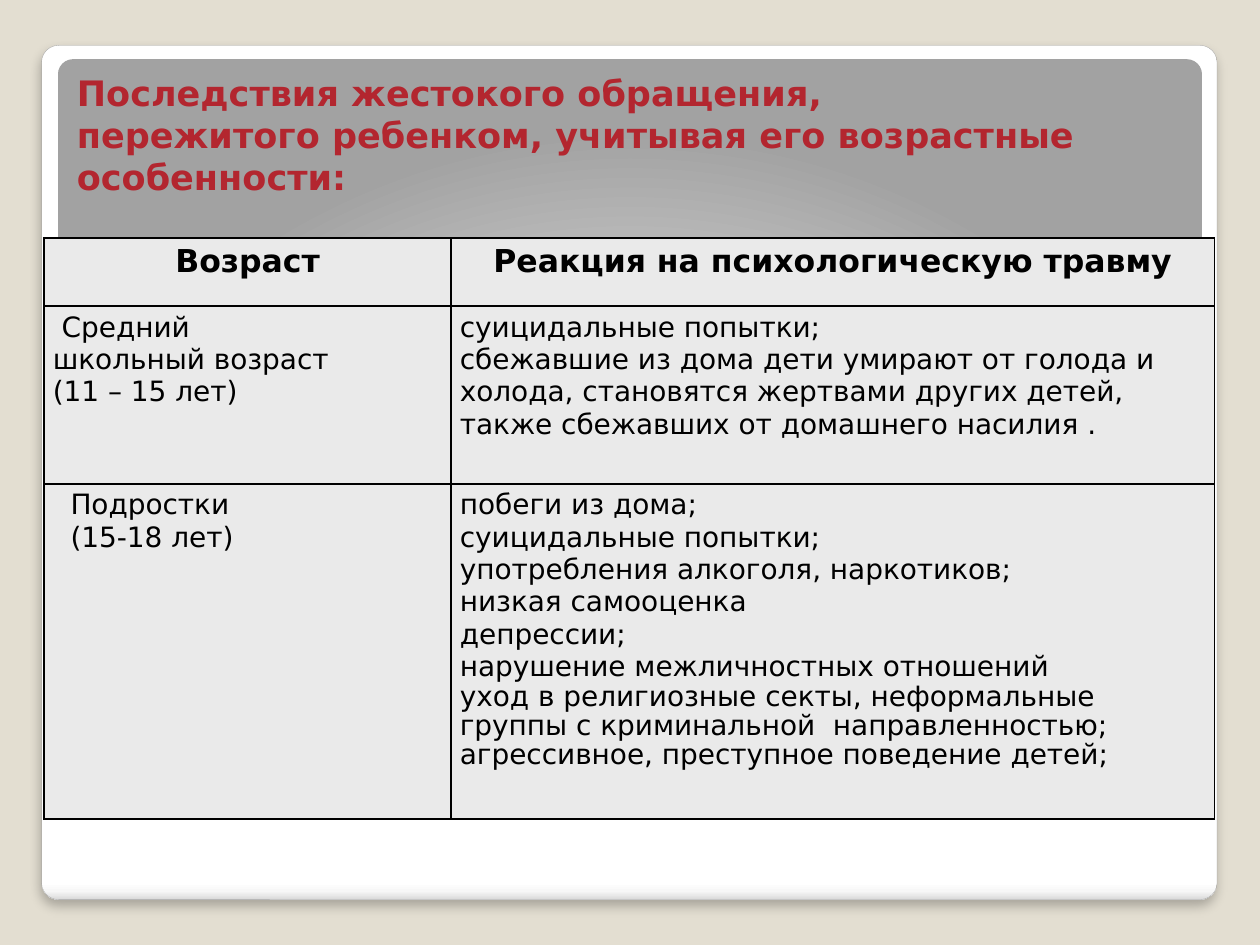
from lxml import etree
from pptx import Presentation
from pptx.dml.color import RGBColor
from pptx.enum import shapes, text
from pptx.oxml import ns
from pptx.util import Inches, Pt

FONT = "DejaVu Sans"
HEADINGS = ["Возраст", "Реакция на психологическую травму"]
MIDDLE_SCHOOL = ["Средний школьный\u00a0возраст", "(11 – 15 лет)"]
MIDDLE_SCHOOL_REACTIONS = [
    "суицидальные попытки;",
    "сбежавшие из дома дети умирают от голода и холода, становятся жертвами "
    "других детей, также сбежавших от домашнего насилия .",
]
TEENAGERS = ["Подростки", "(15-18 лет)"]
TEENAGER_REACTIONS = [
    "побеги из дома;",
    "суицидальные попытки;",
    "употребления алкоголя, наркотиков;",
    "низкая самооценка",
    "депрессии;",
    "нарушение межличностных отношений",
]
TEENAGER_RISKS = [
    "уход в религиозные секты, неформальные группы с криминальной  направленностью;",
    "агрессивное, преступное поведение детей;",
]


def color(value):
    return RGBColor.from_string(value)


def add_element(parent, tag, **attributes):
    values = {name: str(value) for name, value in attributes.items()}
    return etree.SubElement(parent, ns.qn(tag), values)


def add_color(parent, value):
    return add_element(parent, "a:srgbClr", val=value)


def write(frame, lines, size=16, bold=False, fill="000000", spacing=None,
          align=text.PP_ALIGN.LEFT, margin=0, first_indent=0):
    """Append lines as paragraphs, filling the frame's empty first one."""
    for line in lines:
        paragraph = frame.paragraphs[-1]
        if paragraph.runs:
            paragraph = frame.add_paragraph()
        paragraph.alignment = align
        paragraph.space_before = Pt(0)
        if spacing:
            paragraph.line_spacing = spacing
        properties = paragraph._p.get_or_add_pPr()
        properties.set("marL", str(Inches(margin)))
        properties.set("indent", str(Inches(first_indent)))
        run = paragraph.add_run()
        run.text = line
        run.font.name = FONT
        run.font.size = Pt(size)
        run.font.bold = bold
        run.font.color.rgb = color(fill)


def add_panel(slide, left, top, width, height, stops, circular=False):
    """Add a rounded panel with a vertical or circular gradient."""
    panel = slide.shapes.add_shape(
        shapes.MSO_SHAPE.ROUNDED_RECTANGLE,
        Inches(left), Inches(top), Inches(width), Inches(height))
    panel.adjustments[0] = 0.02
    panel.shadow.inherit = False
    panel.line.fill.background()
    gradient = etree.Element(ns.qn("a:gradFill"), rotWithShape="1")
    stop_list = add_element(gradient, "a:gsLst")
    for position, value in stops:
        add_color(add_element(stop_list, "a:gs", pos=position * 1000), value)
    if circular:
        path = add_element(gradient, "a:path", path="circle")
        add_element(path, "a:fillToRect", l=50000, t=175000, r=50000, b=-75000)
    else:
        add_element(gradient, "a:lin", ang=5400000, scaled=0)
    panel._element.spPr.find(ns.qn("a:prstGeom")).addnext(gradient)
    return panel


def add_shadow(shape):
    effects = shape._element.spPr.find(ns.qn("a:effectLst"))
    shadow = add_element(effects, "a:outerShdw", blurRad=Pt(6), dist=Pt(4),
                         dir=5400000, algn="t", rotWithShape=0)
    add_element(add_color(shadow, "000000"), "a:alpha", val=25000)


def add_frame(slide):
    card = add_panel(slide, 0.33, 0.36, 9.33, 6.78, [
        (0, "FFFFFF"), (98, "FFFFFF"), (99, "F7F7F7"), (100, "DADADA")])
    card.line.color.rgb = color("A4A4A4")
    card.line.width = Pt(0.16)
    add_shadow(card)
    add_panel(slide, 0.46, 0.47, 9.08, 6, [
        (0, "FFFFFF"), (55, "E1E1E1"), (100, "A2A2A2")], circular=True)


def set_title(slide):
    title = slide.shapes.title
    title.left, title.top = Inches(0.51), Inches(0.52)
    title.width, title.height = Inches(9.06), Inches(1.11)
    frame = title.text_frame
    frame.word_wrap = True
    frame.auto_size = text.MSO_AUTO_SIZE.NONE
    frame.vertical_anchor = text.MSO_ANCHOR.TOP
    write(frame, ["Последствия жестокого обращения,",
                  "пережитого ребенком, учитывая его возрастные особенности:"],
          size=20, bold=True, fill="B3262F")
    slide.shapes._spTree.append(title._element)  # in front of the panels


def format_cell(cell):
    cell.margin_left = cell.margin_right = Inches(0.07)
    cell.margin_top = cell.margin_bottom = Inches(0.04)
    properties = cell._tc.get_or_add_tcPr()
    for side in ("a:lnL", "a:lnR", "a:lnT", "a:lnB"):
        border = add_element(properties, side, w=Pt(1))
        add_color(add_element(border, "a:solidFill"), "000000")
    cell.fill.solid()
    cell.fill.fore_color.rgb = color("EAEAEA")


def add_reaction_table(slide):
    widths, heights = [3.23, 6.06], [0.54, 1.41, 2.66]
    table = slide.shapes.add_table(
        len(heights), len(widths), Inches(0.35), Inches(1.89),
        Inches(sum(widths)), Inches(sum(heights))).table
    for column, width in zip(table.columns, widths):
        column.width = Inches(width)
    for row, height in zip(table.rows, heights):
        row.height = Inches(height)
    for cell in table.iter_cells():
        format_cell(cell)

    for column, heading in enumerate(HEADINGS):
        write(table.cell(0, column).text_frame, [heading], size=18, bold=True,
              align=text.PP_ALIGN.CENTER)
    middle_school = table.cell(1, 0).text_frame
    write(middle_school, MIDDLE_SCHOOL[:1], first_indent=0.07)
    write(middle_school, MIDDLE_SCHOOL[1:])
    write(table.cell(1, 1).text_frame, MIDDLE_SCHOOL_REACTIONS)
    write(table.cell(2, 0).text_frame, TEENAGERS, margin=0.14)
    reactions = table.cell(2, 1).text_frame
    write(reactions, TEENAGER_REACTIONS, margin=0.67, first_indent=-0.67)
    write(reactions, TEENAGER_RISKS, spacing=0.9)


def main():
    presentation = Presentation()
    presentation.slide_width = Inches(10)
    presentation.slide_height = Inches(7.5)
    slide = presentation.slides.add_slide(presentation.slide_layouts[5])
    slide.background.fill.solid()
    slide.background.fill.fore_color.rgb = color("E3DED1")
    add_frame(slide)
    set_title(slide)
    add_reaction_table(slide)
    presentation.save("out.pptx")


if __name__ == "__main__":
    main()
